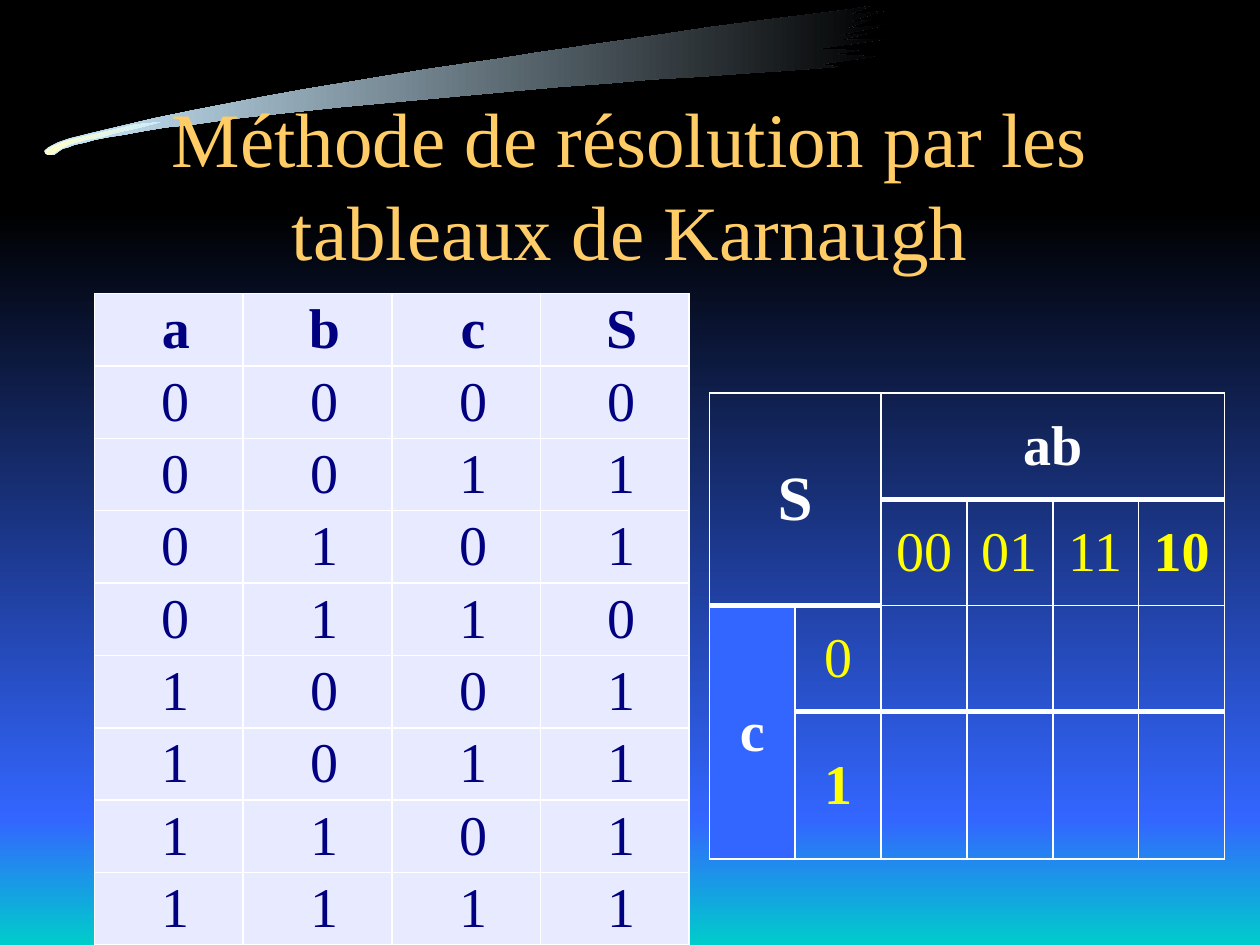
from itertools import product

from lxml.etree import SubElement
from pptx import Presentation
from pptx.dml.color import RGBColor
from pptx.enum.shapes import MSO_SHAPE
from pptx.enum.text import MSO_ANCHOR, MSO_AUTO_SIZE, PP_ALIGN
from pptx.oxml.ns import qn
from pptx.util import Inches, Pt

UNIT = Inches(0.1)
COLUMNS, ROWS = 100, 75
COLORS = {
    "black": "000000", "blue": "3366FF", "teal": "00CCCC", "ice": "CCECFF",
    "cream": "FFFFCC", "gold": "FFCC66", "navy": "000080", "pale": "E8EAFF",
    "white": "FFFFFF", "yellow": "FFFF00",
}
BRUSH = [
    (665, 53), (650, 51), (694, 45), (660, 43), (681, 40), (647, 39), (703, 31),
    (664, 32), (688, 27), (661, 29), (703, 20), (669, 23), (691, 16), (670, 18),
    (701, 9), (673, 12), (690, 5), (671, 8), (647, 11), (614, 15), (561, 22),
    (528, 27), (494, 32), (425, 42), (394, 47), (373, 50), (339, 55), (296, 62),
    (241, 71), (208, 77), (151, 88), (122, 94), (71, 106), (55, 110), (46, 113),
    (38, 117), (36, 119), (35, 120), (36, 122), (38, 123), (43, 123), (47, 120),
    (50, 118), (54, 117), (59, 115), (68, 113), (75, 111), (85, 109), (98, 107),
    (114, 104), (132, 101), (152, 99), (187, 94), (214, 91), (270, 85), (335, 79),
    (389, 74), (443, 69), (484, 66), (517, 63), (553, 61), (594, 58), (625, 56),
]
BRUSH_TIP = [
    (36, 119), (39, 118), (42, 116), (45, 115), (52, 112), (64, 109), (86, 104),
    (107, 99), (127, 97), (108, 102), (94, 105), (80, 109), (68, 111), (54, 115),
    (47, 119), (44, 121), (41, 123), (38, 123), (36, 122), (36, 121),
]


def color(name):
    return RGBColor.from_string(COLORS[name])


def area(left, top, width, height):
    return tuple(round(value * UNIT) for value in (left, top, width, height))


def write(frame, text, size=32, ink="white", bold=False, before=0, indent=0):
    para = frame.paragraphs[0]
    para.alignment = PP_ALIGN.CENTER
    para.space_before = Pt(before)
    if indent:
        para._p.get_or_add_pPr().set("marL", str(indent))
    span = para.add_run()
    span.text = text
    span.font.name = "Times New Roman"
    span.font.size = Pt(size)
    span.font.bold = bold
    span.font.color.rgb = color(ink)


def shade(shape, start, end, angle):
    shape.shadow.inherit = False
    shape.line.fill.background()
    shape.fill.gradient()
    shape.fill.gradient_angle = angle
    for stop, name in zip(shape.fill.gradient_stops, (start, end)):
        stop.color.rgb = color(name)


def add_backdrop(page, box):
    left, top, width, height = box
    page.background.fill.solid()
    page.background.fill.fore_color.rgb = color("black")
    bands = [(0.223, 0.644, "black", "blue"), (0.867, 0.133, "blue", "teal")]
    for start, share, first, last in bands:
        band = page.shapes.add_shape(
            MSO_SHAPE.RECTANGLE, left, top + round(start * height),
            width, round(share * height))
        shade(band, first, last, 270)
    strokes = [(BRUSH, "ice", "black"), (BRUSH_TIP, "cream", "ice")]
    for points, first, last in strokes:
        builder = page.shapes.build_freeform(*points[0], scale=UNIT / 10)
        builder.add_line_segments(points[1:], close=True)
        shade(builder.convert_to_shape(left, top), first, last, 0)


def add_title(page, box, text):
    title = page.shapes.title
    title.left, title.top, title.width, title.height = box
    frame = title.text_frame
    frame.word_wrap = True
    frame.auto_size = MSO_AUTO_SIZE.NONE
    frame.vertical_anchor = MSO_ANCHOR.MIDDLE
    write(frame, text, size=44, ink="gold")
    page.shapes.element.append(title.element)


def add_grid(page, box, columns, row_shares):
    table = page.shapes.add_table(len(row_shares), columns, *box).table
    table.first_row = table.horz_banding = False
    for column in table.columns:
        column.width = round(box[2] / columns)
    for row, share in zip(table.rows, row_shares):
        row.height = round(box[3] * share / sum(row_shares))
    return table


def format_cell(cell, margin, fill=None, top=1, bottom=1):
    cell.vertical_anchor = MSO_ANCHOR.MIDDLE
    cell.margin_left = cell.margin_right = Inches(margin)
    cell.margin_top = cell.margin_bottom = 0
    properties = cell._tc.get_or_add_tcPr()
    for side, width in (("L", 1), ("R", 1), ("T", top), ("B", bottom)):
        line = SubElement(properties, qn(f"a:ln{side}"), w=str(Pt(width)))
        paint = SubElement(line, qn("a:solidFill"))
        SubElement(paint, qn("a:srgbClr"), val=COLORS["white"])
    if fill:
        cell.fill.solid()
        cell.fill.fore_color.rgb = color(fill)
    else:
        cell.fill.background()


def add_truth_table(page, box, headers, outputs):
    inputs = product("01", repeat=len(headers) - 1)
    lines = [headers] + [(*bits, out) for bits, out in zip(inputs, outputs)]
    table = add_grid(page, box, len(headers), [1] * len(lines))
    for row, line in enumerate(lines):
        for column, text in enumerate(line):
            cell = table.cell(row, column)
            format_cell(cell, 0.05, "pale")
            write(cell.text_frame, text, ink="navy", bold=row == 0,
                  before=2.1, indent=Inches(0.11))


def add_karnaugh_map(page, box):
    table = add_grid(page, box, 6, [0.84, 0.84, 0.84, 1.17])
    for first, last in (((0, 0), (1, 1)), ((0, 2), (0, 5)), ((2, 0), (3, 0))):
        table.cell(*first).merge(table.cell(*last))
    thick = {(0, column) for column in range(2, 6)}
    thick |= {(1, column) for column in range(2)}
    thick |= {(2, column) for column in range(1, 6)}
    labels = {
        (0, 0): ("S", {"size": 36, "bold": True}),
        (0, 2): ("ab", {"bold": True}),
        (2, 0): ("c", {"bold": True}),
        (2, 1): ("0", {"ink": "yellow"}),
        (3, 1): ("1", {"ink": "yellow", "bold": True}),
    }
    for column, code in enumerate(("00", "01", "11", "10"), 2):
        labels[1, column] = (code, {"ink": "yellow", "bold": code == "10"})
    for row, column in product(range(4), range(6)):
        cell = table.cell(row, column)
        if cell.is_spanned:
            continue
        last_row = row + cell.span_height - 1
        format_cell(cell, 0.07, "blue" if (row, column) == (2, 0) else None,
                    top=3 if (row - 1, column) in thick else 1,
                    bottom=3 if (last_row, column) in thick else 1)
        if (row, column) in labels:
            text, style = labels[row, column]
            write(cell.text_frame, text, **style)


def main():
    deck = Presentation()
    deck.slide_width, deck.slide_height = COLUMNS * UNIT, ROWS * UNIT
    page = deck.slides.add_slide(deck.slide_layouts[5])
    add_backdrop(page, area(0, 0, COLUMNS, ROWS))
    add_title(page, area(7.5, 8.3, 85, 12.5),
              "Méthode de résolution par les tableaux de Karnaugh")
    add_truth_table(page, area(7.5, 23.3, 47.2, 51.7), ("a", "b", "c", "S"), "01101111")
    add_karnaugh_map(page, area(56.3, 31.2, 40.9, 37))
    deck.save("out.pptx")


if __name__ == "__main__":
    main()
